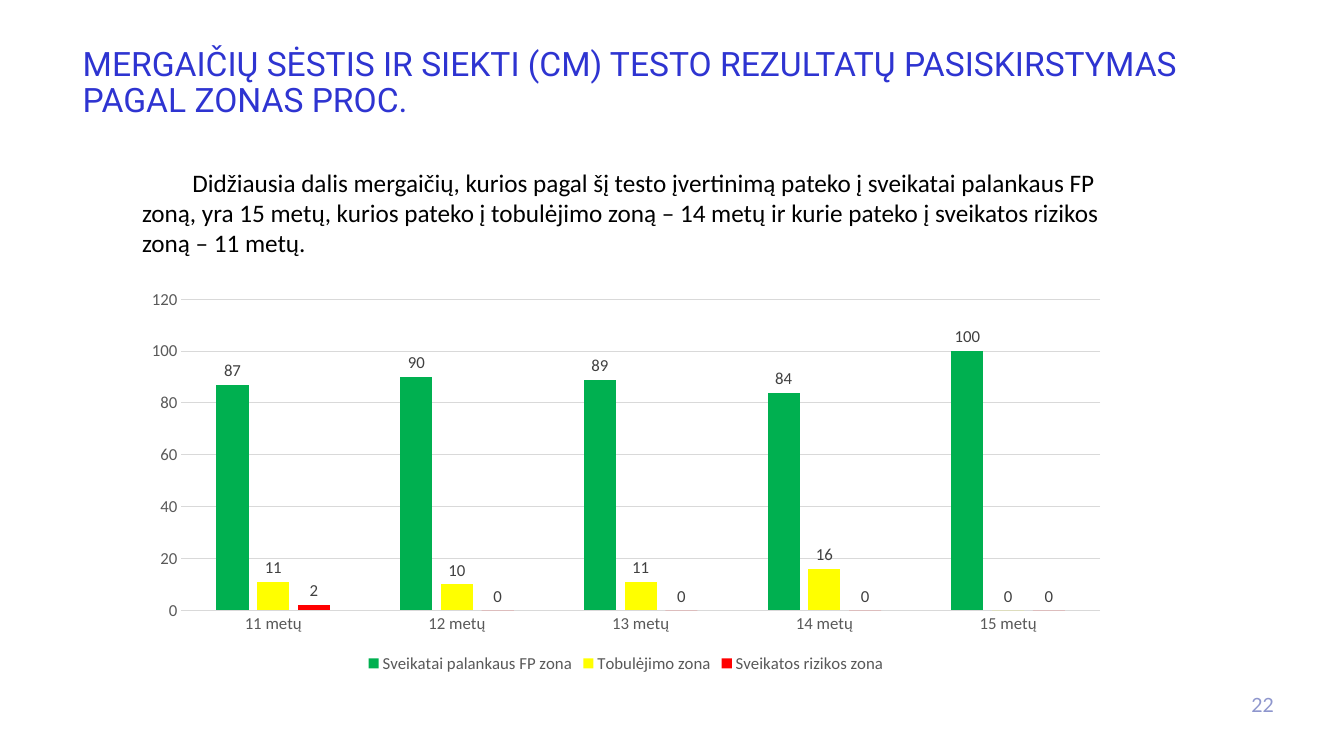
from lxml import etree
from pptx import Presentation
from pptx import util as u
from pptx.chart.data import CategoryChartData
from pptx.dml.color import RGBColor
from pptx.enum import chart as charts
from pptx.enum import text


def paint(target, colour):
    """Give a fill or line format a solid colour."""
    target.solid()
    target.fore_color.rgb = RGBColor.from_string(colour)


def style_font(font, name, size, colour):
    font.name = name
    font.size = u.Pt(size)
    font.bold = False
    paint(font.fill, colour)


def write(frame, words, font="Calibri", size=18, colour="000000",
          align=text.PP_ALIGN.LEFT, anchor=text.MSO_ANCHOR.TOP, spacing=1.0):
    frame.word_wrap = True
    frame.auto_size = text.MSO_AUTO_SIZE.NONE
    frame.vertical_anchor = anchor
    para = frame.paragraphs[0]
    para.alignment = align
    para.line_spacing = spacing
    para.space_before = u.Pt(0)
    span = para.add_run()
    span.text = words
    style_font(span.font, font, size, colour)


class ReportPage:
    grid_colour = "D9D9D9"
    axis_colour = "595959"
    label_colour = "404040"
    chart_font = "Calibri"
    chart_size = 12

    def __init__(self, deck):
        self.page = deck.slides.add_slide(deck.slide_layouts[5])
        paint(self.page.background.fill, "FFFFFF")

    def title(self, words, left, top, width, height, **style):
        box = self.page.shapes.title
        box.left, box.top = u.Cm(left), u.Cm(top)
        box.width, box.height = u.Cm(width), u.Cm(height)
        write(box.text_frame, words, **style)

    def text_box(self, words, left, top, width, height, **style):
        box = self.page.shapes.add_textbox(
            u.Cm(left), u.Cm(top), u.Cm(width), u.Cm(height))
        write(box.text_frame, words, **style)

    def column_chart(self, categories, zones, left, top, width, height):
        data = CategoryChartData(number_format="General")
        data.categories = categories
        for name, values, _ in zones:
            data.add_series(name, values)
        chart = self.page.shapes.add_chart(
            charts.XL_CHART_TYPE.COLUMN_CLUSTERED, u.Cm(left), u.Cm(top),
            u.Cm(width), u.Cm(height), data).chart
        chart.has_title = False
        self.chart_text(chart.font, self.axis_colour)

        # Legend
        chart.has_legend = True
        chart.legend.position = charts.XL_LEGEND_POSITION.BOTTOM
        chart.legend.include_in_layout = False
        self.chart_text(chart.legend.font, self.axis_colour)

        # Axes
        for axis in (chart.category_axis, chart.value_axis):
            axis.major_tick_mark = charts.XL_TICK_MARK.NONE
            axis.minor_tick_mark = charts.XL_TICK_MARK.NONE
            self.chart_text(axis.tick_labels.font, self.axis_colour)
        chart.value_axis.minimum_scale = 0
        chart.value_axis.maximum_scale = 120
        chart.value_axis.major_unit = 20
        chart.value_axis.format.line.fill.background()
        for line in (chart.category_axis.format.line,
                     chart.value_axis.major_gridlines.format.line):
            paint(line.fill, self.grid_colour)
            line.width = u.Pt(0.75)

        # Columns and their values
        plot = chart.plots[0]
        plot.gap_width = 219
        plot.overlap = -27
        plot.vary_by_categories = False
        for series, (_, _, colour) in zip(plot.series, zones):
            paint(series.format.fill, colour)
            series.invert_if_negative = False
            labels = series.data_labels
            labels.show_value = True
            labels.position = charts.XL_LABEL_POSITION.OUTSIDE_END
            self.chart_text(labels.font, self.label_colour)

    def chart_text(self, font, colour):
        style_font(font, self.chart_font, self.chart_size, colour)


def main():
    deck = Presentation()
    deck.slide_width, deck.slide_height = u.Cm(33.87), u.Cm(19.05)
    report = ReportPage(deck)

    # Heading
    report.title(
        "MERGAIČIŲ SĖSTIS IR SIEKTI (CM) TESTO REZULTATŲ PASISKIRSTYMAS "
        "PAGAL ZONAS PROC.",
        1.83, 1.07, 28.98, 3.5, font="Roboto", size=24, colour="2E34D1",
        spacing=0.9)

    # Summary
    report.text_box(
        "\tDidžiausia dalis mergaičių, kurios pagal šį testo įvertinimą pateko "
        "į sveikatai palankaus FP zoną, yra 15 metų, kurios pateko į "
        "tobulėjimo zoną – 14 metų ir kurie pateko į sveikatos rizikos "
        "zoną – 11 metų.",
        3.33, 4.09, 25.53, 2.57)

    # Results by age
    zones = [
        ("Sveikatai palankaus FP zona", (87, 90, 89, 84, 100), "00B050"),
        ("Tobulėjimo zona", (11, 10, 11, 16, 0), "FFFF00"),
        ("Sveikatos rizikos zona", (2, 0, 0, 0, 0), "FF0000"),
    ]
    ages = [f"{age} metų" for age in range(11, 16)]
    report.column_chart(ages, zones, 3.33, 7.09, 24.89, 9.98)

    # Page number
    report.text_box("22", 31.04, 17.25, 1.32, 1.02, font="Lato", size=14,
                    colour="8E96CD", align=text.PP_ALIGN.RIGHT,
                    anchor=text.MSO_ANCHOR.MIDDLE)

    deck.save("out.pptx")


if __name__ == "__main__":
    main()
